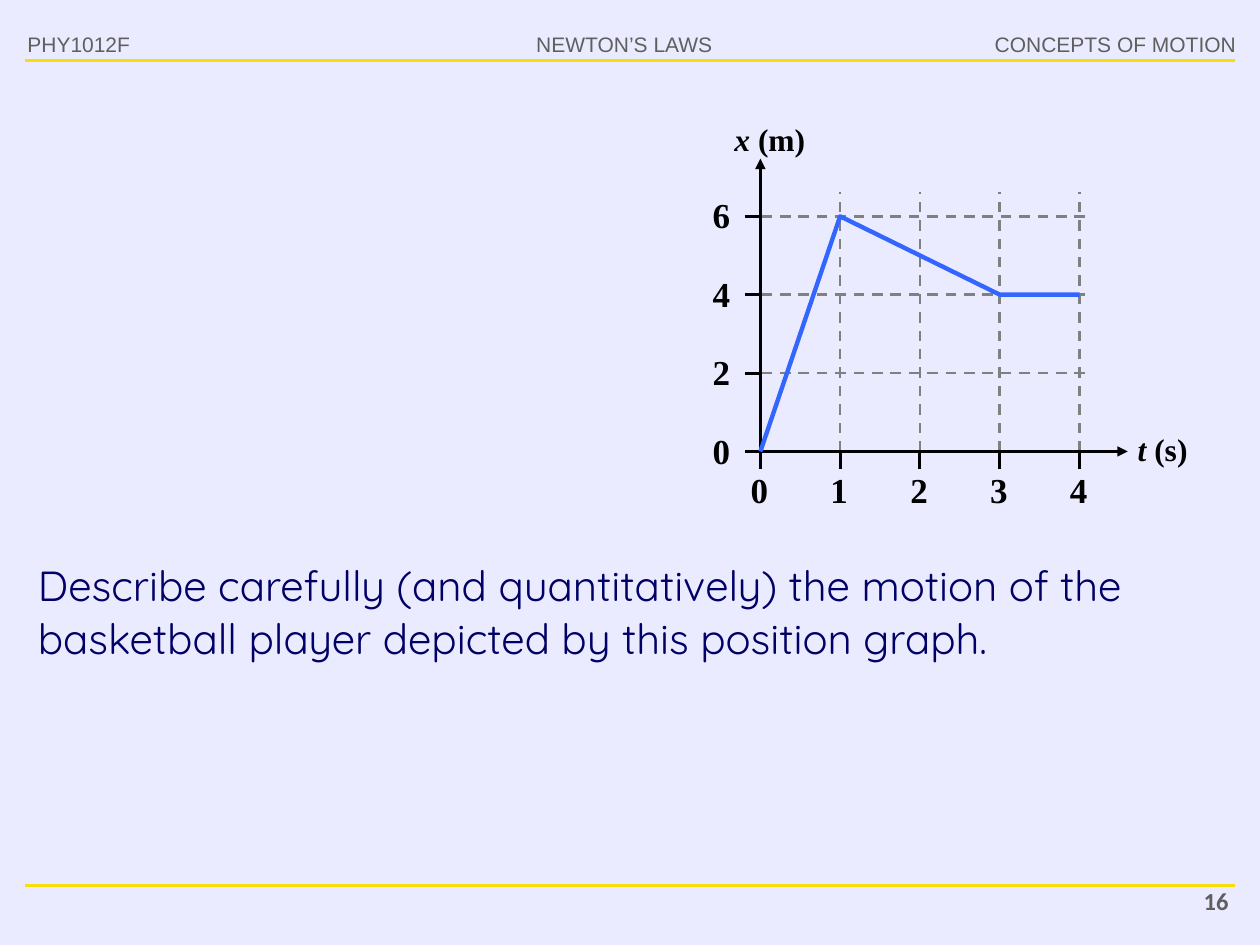
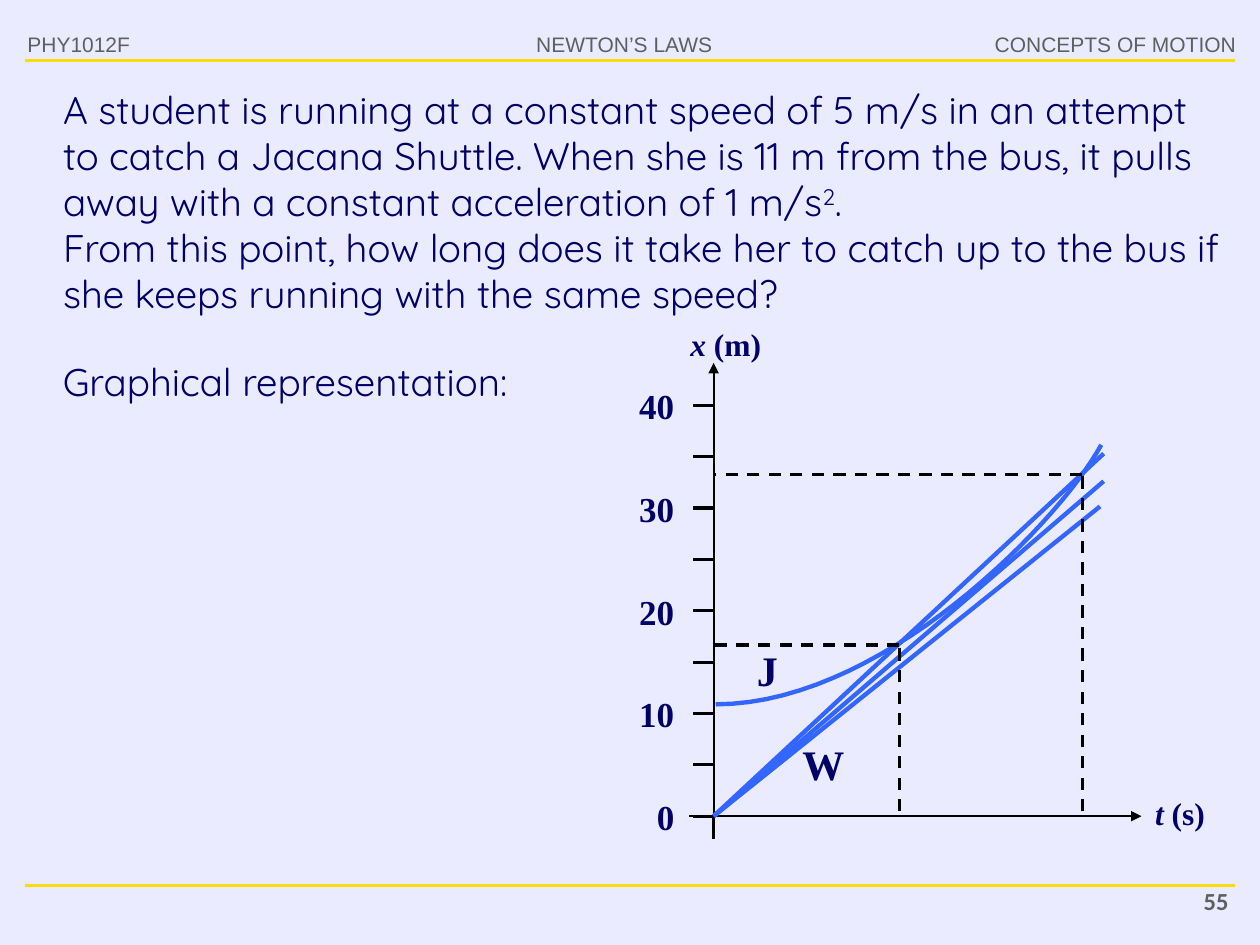
import pptx
import pptx.dml.color
import pptx.enum.dml
import pptx.enum.shapes
import pptx.enum.text
import pptx.oxml
import pptx.oxml.ns
import pptx.util

Pt = pptx.util.Pt
ALIGN = pptx.enum.text.PP_ALIGN

PAPER, YELLOW, GREY = "EBEBFF", "F8DC0E", "5F5F5F"
NAVY, BLACK, GRID_GREY, BLUE = "000066", "000000", "808080", "3366FF"
SERIF, SANS, BODY = "Times New Roman", "Arial", "Quicksand"

# A text is a list of (words, style) runs; a style is "", "italic", "super" or "break".
PLAYER_TASK = [("Describe carefully (and quantitatively) the motion of the basketball "
                "player depicted by this position graph.", "")]
BUS_TASK = [
    ("A student is running at a constant speed of 5 m/s in an attempt to catch a "
     "Jacana Shuttle. When she is 11 m from the bus, it pulls away with a constant "
     "acceleration of 1 m/s", ""),
    ("2", "super"), (".", ""), ("", "break"),
    ("From this point, how long does it take her to catch up to the bus if she "
     "keeps running with the same speed?", "")]
POSITION_AXIS = [("x ", "italic"), ("(m)", "")]
TIME_AXIS = [("t ", "italic"), ("(s)", "")]

PLAYER_TIMES = range(5)
PLAYER_POSITIONS = range(0, 8, 2)
PLAYER_MOTION = [(0, 0), (1, 6), (3, 4), (4, 4)]

BUS_POSITIONS = range(0, 45, 5)
BUS_CURVE = [(409, 402.5), (504.7, 402.5), (605.5, 298), (629.3, 254.2)]
RUNNER_ENDS = [(630.7, 259.2), (630.7, 275), (628.6, 289.4)]
MEETINGS = [(514, 368.6), (618.5, 271.4)]
CURVE_NAMES = [("J", 411, 362), ("W", 437, 415.5)]


def colour(code):
    return pptx.dml.color.RGBColor.from_string(code)


def style_line(line, code, width, dashed=False):
    line.color.rgb = colour(code)
    line.width = Pt(width)
    if dashed:
        line.dash_style = pptx.enum.dml.MSO_LINE.DASH


def add_line(slide, start, end, code=BLACK, width=1.75, dashed=False, arrow=False):
    connector = slide.shapes.add_connector(
        pptx.enum.shapes.MSO_CONNECTOR.STRAIGHT, *map(Pt, (*start, *end)))
    style_line(connector.line, code, width, dashed)
    properties = connector._element.spPr
    if arrow:
        tail = pptx.oxml.parse_xml(
            f'<a:tailEnd {pptx.oxml.ns.nsdecls("a")} type="triangle"/>')
        connector.line._get_or_add_ln().append(tail)
    properties.append(pptx.oxml.parse_xml(f'<a:effectLst {pptx.oxml.ns.nsdecls("a")}/>'))


def add_curve(slide, points):
    places = [(Pt(x), Pt(y)) for x, y in points]
    builder = slide.shapes.build_freeform(*places[0])
    builder.add_line_segments(places[1:], close=False)
    curve = builder.convert_to_shape()
    curve.fill.background()
    curve.shadow.inherit = False
    style_line(curve.line, BLUE, 2.5)


def bezier(points, steps=30):
    """Return evenly sampled points of a cubic curve with four control points."""
    weights = (1, 3, 3, 1)
    return [tuple(sum(w * (1 - s) ** (3 - k) * s ** k * point[axis]
                      for k, (w, point) in enumerate(zip(weights, points)))
                  for axis in (0, 1))
            for s in (step / steps for step in range(steps + 1))]


def write(box, runs, size, font, code, align=ALIGN.LEFT, bold=False,
          spacing=1.0, indent=0, wrap=True):
    frame = box.text_frame
    frame.word_wrap = wrap
    frame.auto_size = pptx.enum.text.MSO_AUTO_SIZE.NONE
    para = frame.paragraphs[0]
    properties = para._p.get_or_add_pPr()
    properties.set("marL", str(Pt(indent)))
    properties.set("indent", "0")
    properties.append(pptx.oxml.parse_xml(f'<a:buNone {pptx.oxml.ns.nsdecls("a")}/>'))
    para.alignment = align
    para.line_spacing = spacing
    para.space_before = Pt(0)
    para.font.size = Pt(size)
    para.font.name = font
    para.font.bold = bold
    para.font.color.rgb = colour(code)
    for words, style in runs:
        if style == "break":
            para.add_line_break()
            continue
        span = para.add_run()
        span.text = words
        if style == "italic":
            span.font.italic = True
        elif style == "super":
            span.font._element.set("baseline", "30000")


def add_text(slide, place, runs, size, font, code, **options):
    box = slide.shapes.add_textbox(*map(Pt, place))
    if isinstance(runs, str):
        runs = [(runs, "")]
    write(box, runs, size, font, code, **options)
    return box


def add_page(deck, number, task, place, size, **options):
    """Add a slide with the shared header, rules, page number and task text."""
    slide = deck.slides.add_slide(deck.slide_layouts[1])
    title = slide.shapes.title._element
    title.getparent().remove(title)
    for y in (34.5, 506.2):
        add_line(slide, (14.4, y), (705.6, y), YELLOW)
    headers = [("PHY1012F", 8.6, 85, ALIGN.LEFT),
               ("NEWTON’S LAWS", 298.8, 116, ALIGN.CENTER),
               ("CONCEPTS OF MOTION", 560.9, 152.6, ALIGN.RIGHT)]
    for words, left, width, align in headers:
        add_text(slide, (left, 14.4, width, 21.8), words, 12, SANS, GREY,
                 align=align, wrap=False)
    add_text(slide, (635, 502.6, 74.2, 26.6), str(number), 14, "Calibri", GREY,
             align=ALIGN.RIGHT, bold=True)
    body = slide.placeholders[1]
    body.left, body.top, body.width, body.height = map(Pt, place)
    write(body, task, size, BODY, NAVY, **options)
    return slide


def draw_player_graph(slide):
    left, base, second, metre = 434.5, 258, 45.6, 22.4
    label = dict(font=SERIF, code=BLACK, bold=True, spacing=1.05)

    for time in PLAYER_TIMES:
        x = left + time * second
        if time:
            add_line(slide, (x, base), (x, 109.5), GRID_GREY, 1.5, dashed=True)
        add_line(slide, (x, base), (x, base + 10))
        add_text(slide, (x - 12.6, 262.8, 31, 32.4), str(time), 20, **label)
    for position in PLAYER_POSITIONS:
        y = base - position * metre
        if position:
            add_line(slide, (620, y), (left, y), GRID_GREY, 1.5, dashed=True)
        add_line(slide, (425.5, y), (left, y))
        add_text(slide, (399.6, y - 17.5, 25.2, 32.4), str(position), 20,
                 align=ALIGN.CENTER, **label)

    add_line(slide, (left, base), (left, 90.7), arrow=True)
    add_line(slide, (left, base), (644.4, base), arrow=True)
    add_text(slide, (411.8, 64, 56.2, 30.2), POSITION_AXIS, 18,
             align=ALIGN.CENTER, **label)
    add_text(slide, (643, 241.2, 46.8, 30.2), TIME_AXIS, 18, **label)
    add_curve(slide, [(left + t * second, base - x * metre) for t, x in PLAYER_MOTION])


def draw_bus_graph(slide):
    left, base, metre = 407.8, 466.4, 5.87
    label = dict(font=SERIF, code=NAVY, bold=True, spacing=1.1)

    add_text(slide, (14.4, 198.7, 691.2, 36), "Graphical representation:", 22,
             BODY, NAVY, spacing=1.1, indent=14.4)
    for position in BUS_POSITIONS:
        y = base - position * metre
        add_line(slide, (396, y), (left, y))
        if position % 10 == 0:
            add_text(slide, (341.3, y - 17.7, 51.1, 33.8), str(position), 20,
                     align=ALIGN.RIGHT, **label)

    add_line(slide, (left, base), (left, 479.5))
    add_line(slide, (left, 475), (left, 207.4), width=1.25, arrow=True)
    add_line(slide, (393.8, base), (652.3, base), width=1.25, arrow=True)
    add_text(slide, (373, 180, 80.6, 31), POSITION_AXIS, 18, indent=14.4, **label)
    add_text(slide, (638.6, 447.8, 57.6, 31), TIME_AXIS, 18, indent=14.4, **label)

    add_curve(slide, bezier(BUS_CURVE))
    for end in RUNNER_ENDS:
        add_line(slide, (left, base), end, BLUE, 2.5)
    for x, y in MEETINGS:
        add_line(slide, (x, 463.7), (x, y), dashed=True)
        add_line(slide, (x, y), (left, y), dashed=True)
    for name, x, y in CURVE_NAMES:
        add_text(slide, (x, y, 51.1, 38.9), name, 24, indent=14.4, **label)


def main():
    deck = pptx.Presentation()
    deck.slide_width, deck.slide_height = Pt(720), Pt(540)
    background = deck.slide_master.background.fill
    background.solid()
    background.fore_color.rgb = colour(PAPER)

    player = add_page(deck, 16, PLAYER_TASK, (14.4, 314.6, 671.8, 67.7), 24, spacing=1.05)
    draw_player_graph(player)
    bus = add_page(deck, 55, BUS_TASK, (14.4, 45.4, 691.2, 139), 22, indent=14.4)
    draw_bus_graph(bus)
    deck.save("out.pptx")


if __name__ == "__main__":
    main()
